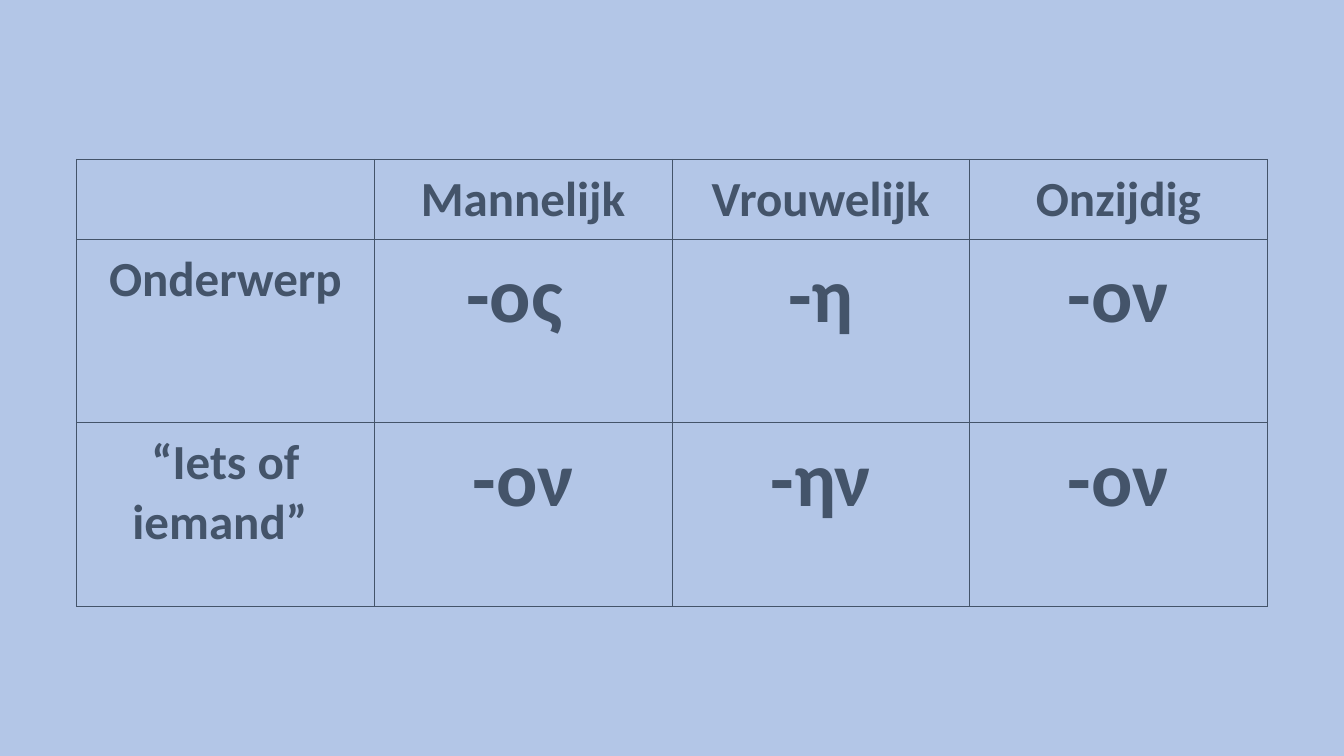
"""Build a slide with a table of Greek case endings by gender."""
from lxml import etree
from pptx import Presentation
from pptx.dml.color import RGBColor
from pptx.enum.text import PP_ALIGN
from pptx.oxml.ns import qn
from pptx.util import Inches, Pt

CENTER = PP_ALIGN.CENTER
COLORS = {"background": "B3C6E7", "ink": "44546A"}
HEADING, ENDING = 35, 55
ROWS = [
    ["", "Mannelijk", "Vrouwelijk", "Onzijdig"],
    ["Onderwerp", "-ος ", "-η", "-ον"],
    ["“Iets of iemand” ", "-ον", "-ην", "-ον"],
]
ROW_HEIGHTS = [0.79, 1.82, 1.82]
TABLE_WIDTH = 11.81


def write(cell, text, size, color=COLORS["ink"], bold=True, font="Calibri"):
    p = cell.text_frame.paragraphs[0]
    p.alignment = CENTER
    r = p.add_run()
    r.text = text
    r.font.name = font
    r.font.size = Pt(size)
    r.font.bold = bold
    r.font.color.rgb = RGBColor.from_string(color)


def add_borders(cell, color=COLORS["ink"], width=0.75):
    tc_pr = cell._tc.get_or_add_tcPr()
    for side in ("lnL", "lnR", "lnT", "lnB"):
        ln = etree.SubElement(tc_pr, qn(f"a:{side}"), w=str(Pt(width)))
        fill = etree.SubElement(ln, qn("a:solidFill"))
        etree.SubElement(fill, qn("a:srgbClr"), val=color)


prs = Presentation()
prs.slide_width, prs.slide_height = Inches(13.33), Inches(7.5)
s = prs.slides.add_slide(prs.slide_layouts[6])
s.background.fill.solid()
s.background.fill.fore_color.rgb = RGBColor.from_string(COLORS["background"])

left = (prs.slide_width - Inches(TABLE_WIDTH)) // 2
table = s.shapes.add_table(len(ROWS), len(ROWS[0]), left, Inches(1.58),
                           Inches(TABLE_WIDTH), Inches(sum(ROW_HEIGHTS))).table
table.first_row = False
table.horz_banding = False

for i, (row, height) in enumerate(zip(ROWS, ROW_HEIGHTS)):
    table.rows[i].height = Inches(height)
    for j, text in enumerate(row):
        cell = table.cell(i, j)
        cell.margin_left = cell.margin_right = Inches(0.1)
        cell.margin_top = cell.margin_bottom = Inches(0.1)
        add_borders(cell)
        cell.fill.background()
        if text:
            write(cell, text, ENDING if i and j else HEADING)

prs.save("out.pptx")
